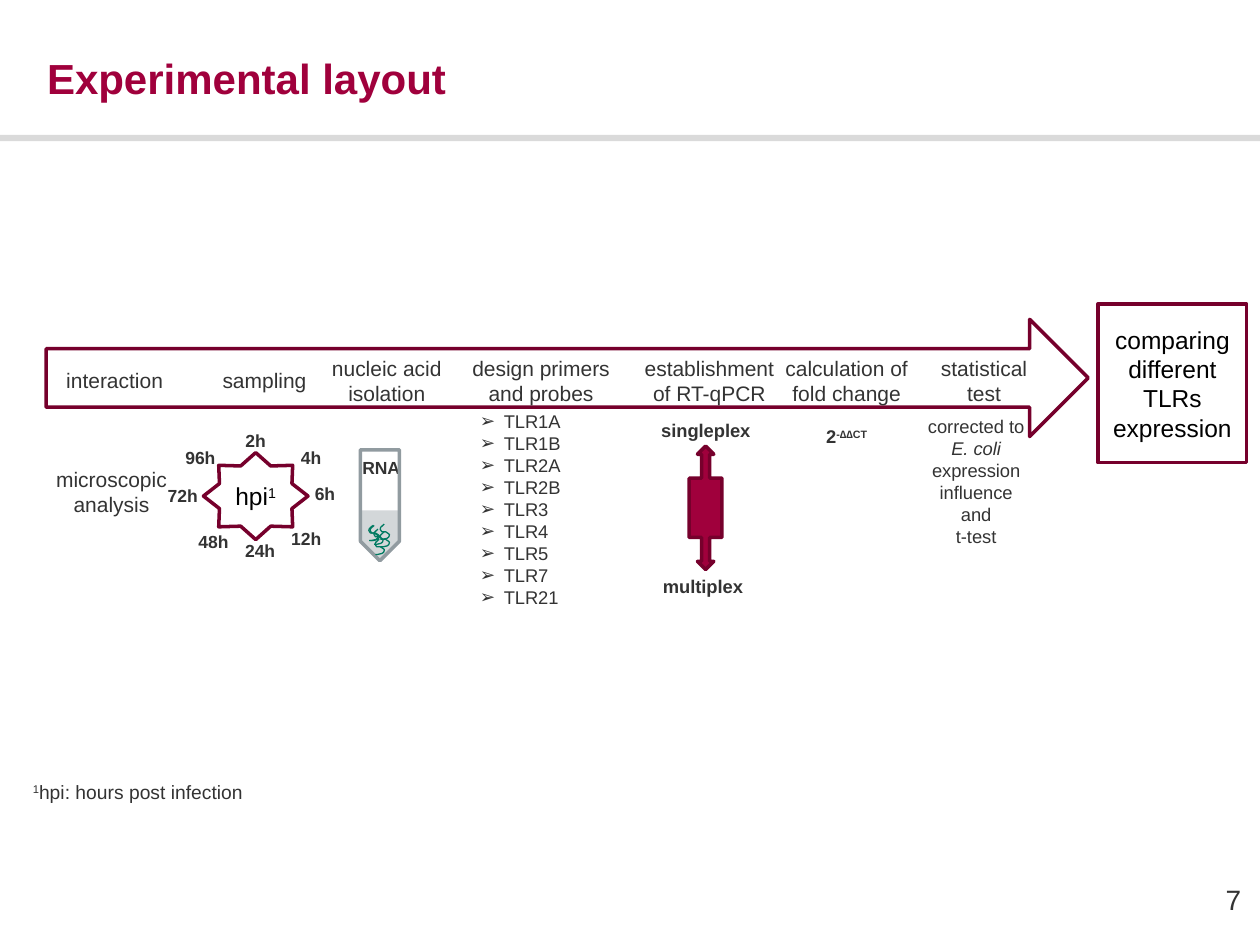
from lxml.etree import SubElement
from pptx import Presentation
from pptx.dml.color import RGBColor
from pptx.enum.shapes import MSO_SHAPE
from pptx.enum.text import MSO_ANCHOR, MSO_AUTO_SIZE, PP_ALIGN
from pptx.oxml.ns import qn
from pptx.util import Inches, Pt

CRIMSON = RGBColor(0xA0, 0x00, 0x3C)
WINE = RGBColor(0x76, 0x00, 0x2C)
INK = RGBColor(0x33, 0x33, 0x33)
BLACK = RGBColor(0x00, 0x00, 0x00)
RULE_GREY = RGBColor(0xDA, 0xDA, 0xDA)
LIQUID = RGBColor(0xD3, 0xD7, 0xD9)
TUBE_GREY = RGBColor(0x91, 0x9B, 0xA0)
RNA_GREEN = RGBColor(0x00, 0x7A, 0x61)

deck = Presentation()
deck.slide_width, deck.slide_height = Inches(10), Inches(7.5)
page = deck.slides.add_slide(deck.slide_layouts[6])

# Grid of 100 columns by 75 rows
COLUMN = deck.slide_width / 100
ROW = deck.slide_height / 75


def draw(kind, left, top, width, height, fill=None, line=None, turn=0):
    """Place a preset shape on the grid."""
    shape = page.shapes.add_shape(kind, round(left * COLUMN), round(top * ROW),
                                  round(width * COLUMN), round(height * ROW))
    shape.shadow.inherit = False
    shape.rotation = turn
    if fill is None:
        shape.fill.background()
    else:
        shape.fill.solid()
        shape.fill.fore_color.rgb = fill
    if line is None:
        shape.line.fill.background()
    else:
        shape.line.color.rgb = line
        shape.line.width = Pt(2)
    return shape


def write(paragraphs, place=None, box=None, size=12, color=INK, bold=False,
          align=PP_ALIGN.CENTER, anchor=MSO_ANCHOR.TOP, wrap=True, bullet=None):
    """Fill a box with paragraphs, each a list of (text, trait) spans."""
    if box is None:
        left, top, width, height = place
        box = page.shapes.add_textbox(round(left * COLUMN), round(top * ROW),
                                      round(width * COLUMN), round(height * ROW))
        box.text_frame.auto_size = MSO_AUTO_SIZE.SHAPE_TO_FIT_TEXT
    frame = box.text_frame
    frame.word_wrap = wrap
    frame.vertical_anchor = anchor
    if isinstance(paragraphs, str):
        paragraphs = [[(paragraphs, None)]]
    for index, spans in enumerate(paragraphs):
        para = frame.add_paragraph() if index else frame.paragraphs[0]
        para.alignment = align
        if bullet:
            properties = para._p.get_or_add_pPr()
            properties.set("marL", str(round(1.9 * COLUMN)))
            properties.set("indent", str(round(-1.9 * COLUMN)))
            SubElement(properties, qn("a:buFont")).set("typeface", "Arial")
            SubElement(properties, qn("a:buChar")).set("char", bullet)
        for text, trait in spans:
            span = para.add_run()
            span.text = text
            span.font.name = "Arial"
            span.font.size = Pt(size)
            span.font.color.rgb = color
            span.font.bold = bold
            if trait == "italic":
                span.font.italic = True
            elif trait == "super":
                span._r.get_or_add_rPr().set("baseline", "30000")
    return box


# Header rule, page number and footnote
draw(MSO_SHAPE.RECTANGLE, 0, 10.7, 100, 0.5, fill=RULE_GREY)
number = write("7", (92.4, 69.4, 6.1, 4), size=16, align=PP_ALIGN.RIGHT,
               anchor=MSO_ANCHOR.MIDDLE)
number.text_frame.margin_left = number.text_frame.margin_right = 0
write([[("1", "super"), ("hpi: hours post infection", None)]],
      (1.4, 61.4, 19.1, 2.9), size=11, wrap=False)

# Process arrow with its steps
draw(MSO_SHAPE.RIGHT_ARROW, 3.67, 25.35, 82.7, 9.3, line=WINE)
for step, left, width, line_count in [
        ("interaction", 3.9, 10.4, 1),
        ("sampling", 16.3, 9.4, 1),
        ("nucleic acid isolation", 24.8, 11.8, 2),
        ("design primers and probes", 35.6, 14.7, 2),
        ("establishment of RT-qPCR", 49.4, 13.8, 2),
        ("calculation of fold change", 61.3, 11.8, 2),
        ("statistical test", 72.2, 11.8, 2)]:
    write(step, (left, 29.7 - line_count, width, 1 + 2 * line_count))
write("microscopic analysis", (3.1, 36.55, 11.5, 5))

# Outcome
outcome = draw(MSO_SHAPE.RECTANGLE, 87.15, 24.13, 11.8, 12.6, line=WINE)
write("comparing different TLRs expression", box=outcome, size=14, color=BLACK,
      anchor=MSO_ANCHOR.MIDDLE)

# Fold change and statistics
write([[("2", None), ("-∆∆CT", "super")]], (64.2, 33.25, 6, 2.9), size=10.5, bold=True)
write([[("corrected to ", None), ("E. coli ", "italic"), ("expression influence", None)],
       [("and", None)], [("t-test", None)]], (72.63, 32.45, 9.7, 11.6), size=10.5)

# Target genes
genes = ["1A", "1B", "2A", "2B", "3", "4", "5", "7", "21"]
write([[("TLR" + gene, None)] for gene in genes], (37.1, 32.04, 9.3, 16.9),
      size=10.5, align=PP_ALIGN.LEFT, bullet="➢")

# RNA tube
draw(MSO_SHAPE.PENTAGON, 28.25, 40.95, 4, 3.1, fill=LIQUID, turn=90)
write("RNA", (27.65, 35.8, 5.2, 2.7), size=10, bold=True)
draw(MSO_SHAPE.PENTAGON, 25.75, 38.55, 8.8, 3.1, line=TUBE_GREY, turn=90)

# RNA strands: one chain of cubic curves (two handles, then the end), set down six times
START = (0.3, 0)
CURVES = [((0.1, 0.2), (-0.2, 0.3), (0.1, 0.6)),
          ((0.1, 0.6), (0.3, 0.6), (0.4, 0.6)),
          ((0.5, 0.7), (0.8, 0.8), (0.7, 0.9)),
          ((0.7, 1.1), (0.4, 1.2), (0.2, 1.2)),
          ((0.1, 1.2), (0, 1.2), (0, 1.2))]
for left, top in [(29.3, 41.7), (30.2, 41.6), (29.8, 42.8),
                  (30.2, 42.2), (29.7, 42), (29.4, 41.7)]:
    knots = [((left + x) * COLUMN, (top + y) * ROW)
             for x, y in [START] + [curve[-1] for curve in CURVES]]
    builder = page.shapes.build_freeform(*knots[0])
    builder.add_line_segments(knots[1:], close=False)
    squiggle = builder.convert_to_shape()
    for segment, curve in zip(list(squiggle._element.iter(qn("a:lnTo"))), CURVES):
        outline = segment.getparent()
        bend = SubElement(outline, qn("a:cubicBezTo"))
        outline.replace(segment, bend)
        for x, y in curve:
            point = SubElement(bend, qn("a:pt"))
            point.set("x", str(round(x * COLUMN)))
            point.set("y", str(round(y * ROW)))
    squiggle.shadow.inherit = False
    squiggle.fill.background()
    squiggle.line.color.rgb = RNA_GREEN
    squiggle.line.width = Pt(0.75)

# Sampling clock
clock = draw(MSO_SHAPE.STAR_8_POINT, 16.15, 35.92, 8.3, 6.9, line=WINE)
write([[("hpi", None), ("1", "super")]], box=clock, size=14, color=BLACK,
      anchor=MSO_ANCHOR.MIDDLE)
for hour, left, top, width in [
        ("2h", 18.5, 33.65, 4), ("4h", 22.9, 35, 3.9), ("6h", 24, 37.85, 4.3),
        ("12h", 22.13, 41.4, 4.5), ("24h", 18.47, 42.35, 4.9), ("48h", 14.77, 41.65, 4.45),
        ("72h", 12.33, 38, 4.7), ("96h", 13.73, 35, 5.4)]:
    write(hour, (left, top, width, 2.7), size=10, bold=True, align=PP_ALIGN.LEFT)

# From singleplex to multiplex
write("singleplex", (51.27, 32.8, 9.5, 2.8), size=10.5, bold=True)
draw(MSO_SHAPE.LEFT_RIGHT_ARROW_CALLOUT, 51.1, 39, 9.8, 2.6,
     fill=CRIMSON, line=WINE, turn=90)
write("multiplex", (51.63, 45.15, 8.5, 2.8), size=10.5, bold=True,
      align=PP_ALIGN.LEFT, wrap=False)

# Title
title = write("Experimental layout", (2.75, 3.65, 78.7, 7.9), size=24, color=CRIMSON,
              bold=True, align=PP_ALIGN.LEFT)
title.text_frame.auto_size = MSO_AUTO_SIZE.NONE

deck.save("out.pptx")
